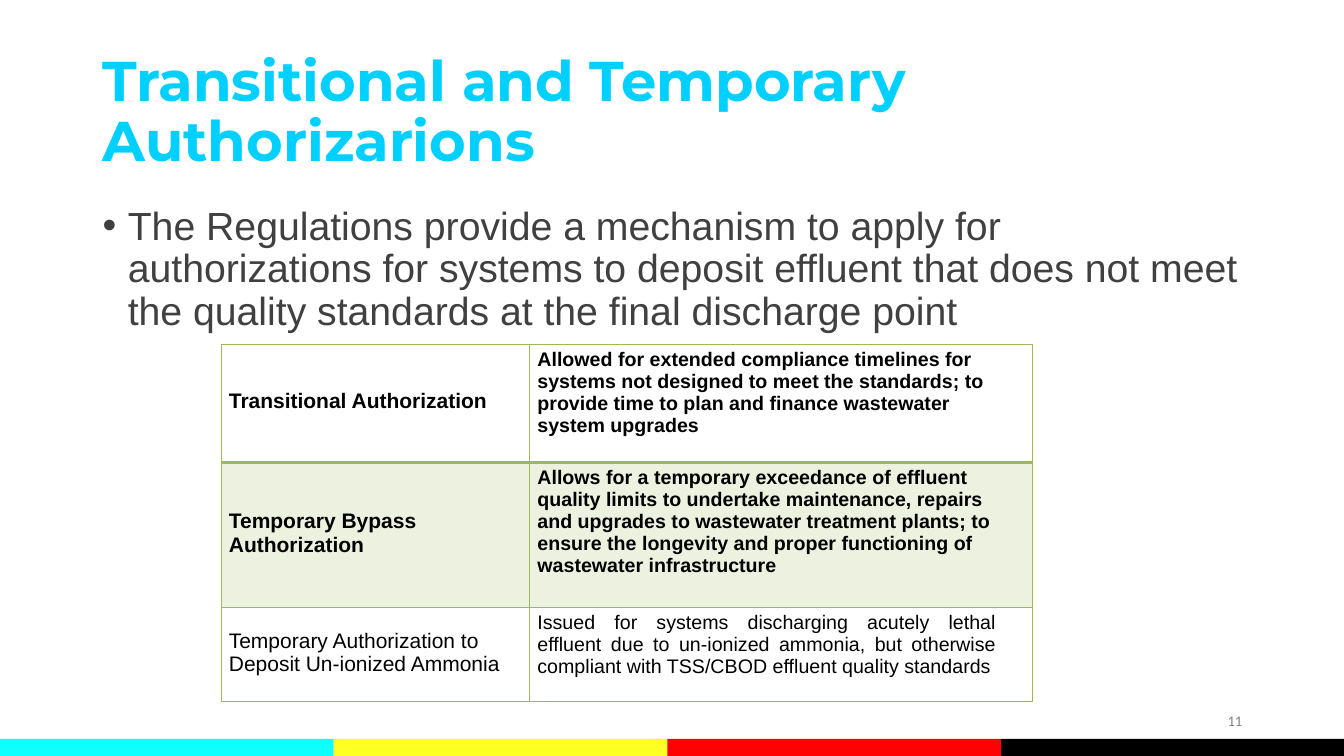
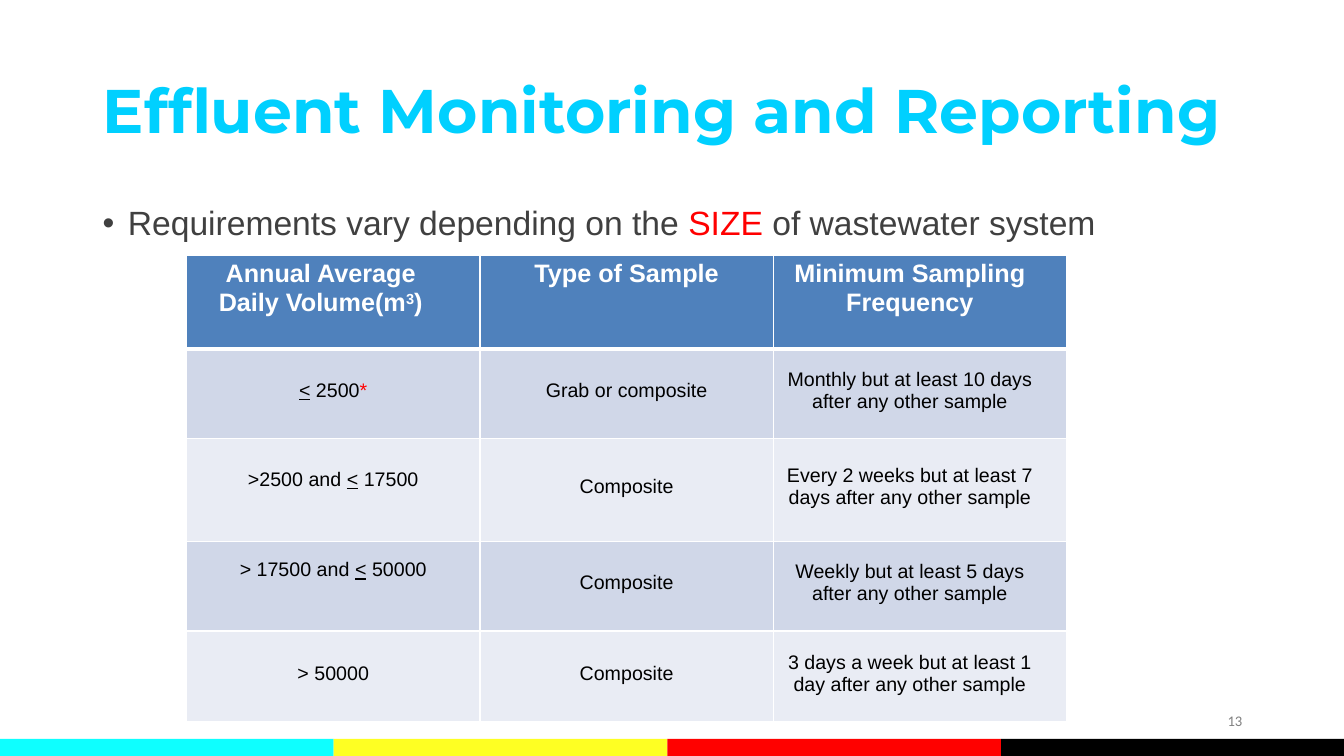
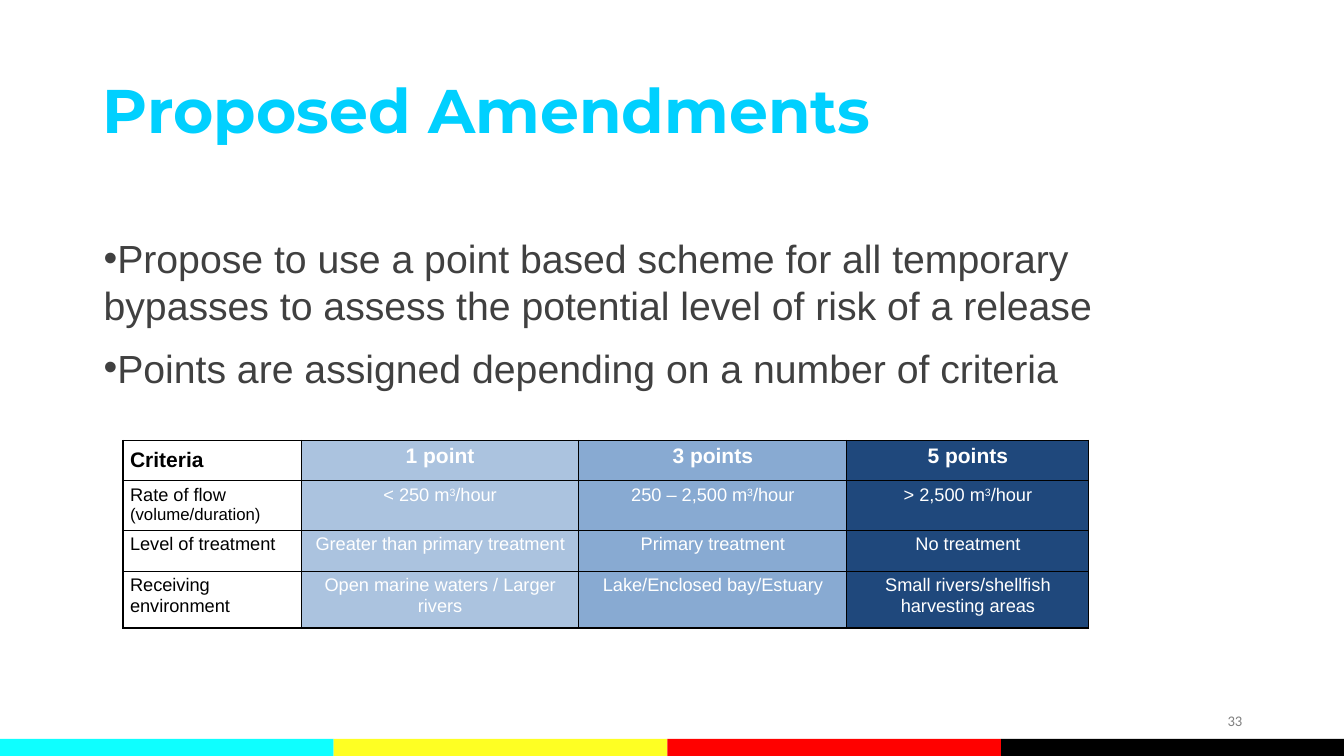
from lxml import etree
from pptx import Presentation
from pptx.dml.color import RGBColor
from pptx.enum import shapes, text
from pptx.oxml import ns
from pptx.util import Inches, Pt

COLORS = {
    "title": "00D0FF", "body": "404040", "number": "808080",
    "black": "000000", "white": "FFFFFF", "red": "FF0000",
    "green": "9BBA58", "pale_green": "ECF2DF",
    "header_blue": "4F81BC", "band_dark": "D0D7E8", "band_light": "E9ECF4",
    "low": "ABC3DF", "medium": "88AAD2", "high": "1F487C",
}
BANDS = ["0EFFFF", "FEFF23", "FF0100", "000000"]
SLIDE_WIDTH = 13.33
BAND_WIDTH = 3.31
LEFT, CENTER, RIGHT, JUSTIFY = (
    text.PP_ALIGN.LEFT, text.PP_ALIGN.CENTER, text.PP_ALIGN.RIGHT, text.PP_ALIGN.JUSTIFY)
TOP, MIDDLE = text.MSO_ANCHOR.TOP, text.MSO_ANCHOR.MIDDLE


def rgb(name):
    return RGBColor.from_string(COLORS[name])


def set_font(font, size, color, name="Arial", bold=False):
    font.size = Pt(size)
    font.name = name
    font.bold = bold
    font.color.rgb = rgb(color)


def add_runs(paragraph, content):
    parts = [(content, None)] if isinstance(content, str) else content
    for wording, style in parts:
        run = paragraph.add_run()
        run.text = wording
        if style == "superscript":
            run._r.get_or_add_rPr().set("baseline", "25000")
        elif style == "underline":
            run.font.underline = True
        elif style == "red":
            run.font.color.rgb = rgb("red")


def add_bullet(paragraph, left, hanging):
    properties = paragraph._p.get_or_add_pPr()
    properties.set("marL", str(Inches(left)))
    properties.set("indent", str(-Inches(hanging)))
    font = etree.SubElement(properties, ns.qn("a:buFont"))
    font.set("typeface", "Arial")
    bullet = etree.SubElement(properties, ns.qn("a:buChar"))
    bullet.set("char", "•")


def add_title(slide, wording, size):
    title = slide.shapes.title
    title.left, title.top = Inches(0.92), Inches(0.4)
    title.width, title.height = Inches(11.5), Inches(1.45)
    frame = title.text_frame
    frame.word_wrap = True
    frame.auto_size = text.MSO_AUTO_SIZE.NONE
    frame.vertical_anchor = MIDDLE
    paragraph = frame.paragraphs[0]
    paragraph.alignment = LEFT
    paragraph.line_spacing = 0.9
    add_runs(paragraph, wording)
    set_font(paragraph.font, size, "title", "Montserrat", True)


def add_bands(slide):
    for index, color in enumerate(BANDS):
        left = index * BAND_WIDTH
        width = SLIDE_WIDTH - left if index == len(BANDS) - 1 else BAND_WIDTH
        band = slide.shapes.add_shape(
            shapes.MSO_SHAPE.RECTANGLE, Inches(left), Inches(7.33), Inches(width), Inches(0.17))
        band.shadow.inherit = False
        band.fill.solid()
        band.fill.fore_color.rgb = RGBColor.from_string(color)
        band.line.fill.background()


def add_number(slide, number):
    box = slide.shapes.add_textbox(Inches(9.42), Inches(6.95), Inches(3), Inches(0.4))
    frame = box.text_frame
    frame.word_wrap = True
    frame.vertical_anchor = MIDDLE
    paragraph = frame.paragraphs[0]
    paragraph.alignment = RIGHT
    add_runs(paragraph, str(number))
    set_font(paragraph.font, 10.5, "number", "Calibri")


def add_slide(presentation, title, title_size, number):
    slide = presentation.slides.add_slide(presentation.slide_layouts[5])
    add_bands(slide)
    add_title(slide, title, title_size)
    add_number(slide, number)
    return slide


def add_bullets(slide, items, top, width, height, size, spacing=0.9, left=0.25, hanging=0.25):
    box = slide.shapes.add_textbox(Inches(0.92), Inches(top), Inches(width), Inches(height))
    frame = box.text_frame
    frame.word_wrap = True
    for index, item in enumerate(items):
        paragraph = frame.add_paragraph() if index else frame.paragraphs[0]
        paragraph.line_spacing = spacing
        if index:
            paragraph.space_before = Pt(10.8)
        add_bullet(paragraph, left, hanging)
        add_runs(paragraph, item)
        set_font(paragraph.font, size, "body")


def add_table(slide, left, top, columns, rows):
    frame = slide.shapes.add_table(
        len(rows), len(columns), Inches(left), Inches(top),
        Inches(sum(columns)), Inches(sum(rows)))
    table = frame.table
    table.first_row = False
    table.horz_banding = False
    for column, width in zip(table.columns, columns):
        column.width = Inches(width)
    for row, height in zip(table.rows, rows):
        row.height = Inches(height)
    return table


def set_borders(cell, color, top=1, bottom=1):
    properties = cell._tc.get_or_add_tcPr()
    for side, width in (("L", 1), ("R", 1), ("T", top), ("B", bottom)):
        line = etree.SubElement(properties, ns.qn("a:ln" + side), w=str(Pt(width)))
        fill = etree.SubElement(line, ns.qn("a:solidFill"))
        etree.SubElement(fill, ns.qn("a:srgbClr"), val=COLORS[color])


def fill_cell(cell, paragraphs, sizes, color, fill, bold=False,
              align=LEFT, anchor=TOP, margins=(0, 0, 0, 0)):
    cell.fill.solid()
    cell.fill.fore_color.rgb = rgb(fill)
    cell.vertical_anchor = anchor
    cell.margin_left, cell.margin_top, cell.margin_right, cell.margin_bottom = map(Inches, margins)
    for index, (content, size) in enumerate(zip(paragraphs, sizes)):
        paragraph = cell.text_frame.add_paragraph() if index else cell.text_frame.paragraphs[0]
        paragraph.alignment = align
        add_runs(paragraph, content)
        set_font(paragraph.font, size, color, bold=bold)


def build_authorizations(presentation):
    slide = add_slide(presentation, "Transitional and Temporary Authorizarions", 40, 11)
    add_bullets(slide, [
        "The Regulations provide a mechanism to apply for authorizations for systems to deposit "
        "effluent that does not meet the quality standards at the final discharge point",
    ], 2, 11.5, 1.45, 28)
    entries = [
        ("Transitional Authorization",
         "Allowed for extended compliance timelines for systems not designed to meet the "
         "standards; to provide time to plan and finance wastewater system upgrades"),
        ("Temporary Bypass Authorization",
         "Allows for a temporary exceedance of effluent quality limits to undertake maintenance, "
         "repairs and upgrades to wastewater treatment plants; to ensure the longevity and "
         "proper functioning of wastewater infrastructure"),
        ("Temporary Authorization to Deposit Un-ionized Ammonia",
         "Issued for systems discharging acutely lethal effluent due to un-ionized ammonia, but "
         "otherwise compliant with TSS/CBOD effluent quality standards"),
    ]
    table = add_table(slide, 2.2, 3.42, [3.05, 4.99], [1.17, 1.44, 0.93])
    for row, (name, purpose) in enumerate(entries):
        fill = "pale_green" if row == 1 else "white"
        bold = row < 2
        for column in range(2):
            set_borders(table.cell(row, column), "green",
                        top=2.25 if row == 1 else 1, bottom=2.25 if row == 0 else 1)
        fill_cell(table.cell(row, 0), [name], [15], "black", fill, bold,
                  anchor=MIDDLE, margins=(0.07, 0, 0, 0.04))
        fill_cell(table.cell(row, 1), [purpose], [14], "black", fill, bold,
                  align=LEFT if bold else JUSTIFY, margins=(0.08, 0.04, 0.36, 0))


def build_monitoring(presentation):
    slide = add_slide(presentation, "Effluent Monitoring and Reporting", 44, 13)
    add_bullets(slide, [[
        ("Requirements vary depending on the ", None), ("SIZE ", "red"),
        ("of wastewater system", None),
    ]], 2, 11.5, 0.54, 24)
    header = [
        [("Annual Average Daily Volume(m", None), ("3", "superscript"), (")", None)],
        "Type of Sample",
        "Minimum Sampling Frequency",
    ]
    entries = [
        ([("<", "underline"), (" 2500", None), ("*", "red")],
         "Grab or composite", "Monthly but at least 10 days after any other sample"),
        ([(">2500 and ", None), ("<", "underline"), (" 17500", None)],
         "Composite", "Every 2 weeks but at least 7 days after any other sample"),
        ([("> 17500 and ", None), ("<", "underline"), (" 50000", None)],
         "Composite", "Weekly but at least 5 days after any other sample"),
        ("> 50000", "Composite", "3 days a week but at least 1 day after any other sample"),
    ]
    volume_lifts = [0.06, 0.2, 0.32, 0.06]
    header_sides = [(0.2, 0.45), (0, 0), (0.05, 0.25)]
    body_sides = [(0, 0), (0, 0), (0.05, 0.25)]
    table = add_table(slide, 1.85, 2.53, [2.91] * 3, [0.93, 0.89, 1.02, 0.89, 0.9])
    for column, (content, (left, right)) in enumerate(zip(header, header_sides)):
        cell = table.cell(0, column)
        set_borders(cell, "white", bottom=3)
        fill_cell(cell, [content], [18], "white", "header_blue", True, CENTER,
                  margins=(left, 0.05, right, 0))
    for row, (entry, volume_lift) in enumerate(zip(entries, volume_lifts), 1):
        for column, (content, (left, right)) in enumerate(zip(entry, body_sides)):
            cell = table.cell(row, column)
            lift = 0.06 if column else volume_lift
            set_borders(cell, "white", top=3 if row == 1 else 1)
            fill_cell(cell, [content], [14], "black", "band_dark" if row % 2 else "band_light",
                      align=CENTER, anchor=MIDDLE, margins=(left, 0, right, lift))


def build_amendments(presentation):
    slide = add_slide(presentation, "Proposed Amendments", 44, 33)
    add_bullets(slide, [
        "Propose to use a point based scheme for all temporary bypasses to assess the potential "
        "level of risk of a release",
        "Points are assigned depending on a number of criteria",
    ], 2.28, 10.9, 1.98, 28, spacing=Pt(33.6), left=0.01, hanging=0)

    def flow(amount):
        return [(amount + " m", None), ("3", "superscript"), ("/hour", None)]

    entries = [
        (["Criteria"], "1 point", "3 points", "5 points"),
        (["Rate of flow", "(volume/duration)"],
         flow("< 250"), flow("250 – 2,500"), flow("> 2,500")),
        (["Level of treatment"],
         "Greater than primary treatment", "Primary treatment", "No treatment"),
        (["Receiving environment"], "Open marine waters / Larger rivers",
         "Lake/Enclosed bay/Estuary", "Small rivers/shellfish harvesting areas"),
    ]
    fills = ["white", "low", "medium", "high"]
    table = add_table(slide, 1.22, 4.37, [1.77, 2.75, 2.66, 2.4], [0.4, 0.49, 0.41, 0.56])
    for row, entry in enumerate(entries):
        is_header = row == 0
        for column, (content, fill) in enumerate(zip(entry, fills)):
            cell = table.cell(row, column)
            is_label = column == 0
            set_borders(cell, "black")
            fill_cell(cell, content if is_label else [content],
                      [15] if is_header else [13, 12],
                      "black" if is_label else "white", fill, is_header,
                      LEFT if is_label else CENTER,
                      margins=(0.07, 0.08 if is_header and is_label else 0.04, 0.07, 0))


def main():
    presentation = Presentation()
    presentation.slide_width = Inches(SLIDE_WIDTH)
    presentation.slide_height = Inches(7.5)
    build_authorizations(presentation)
    build_monitoring(presentation)
    build_amendments(presentation)
    presentation.save("out.pptx")


if __name__ == "__main__":
    main()
